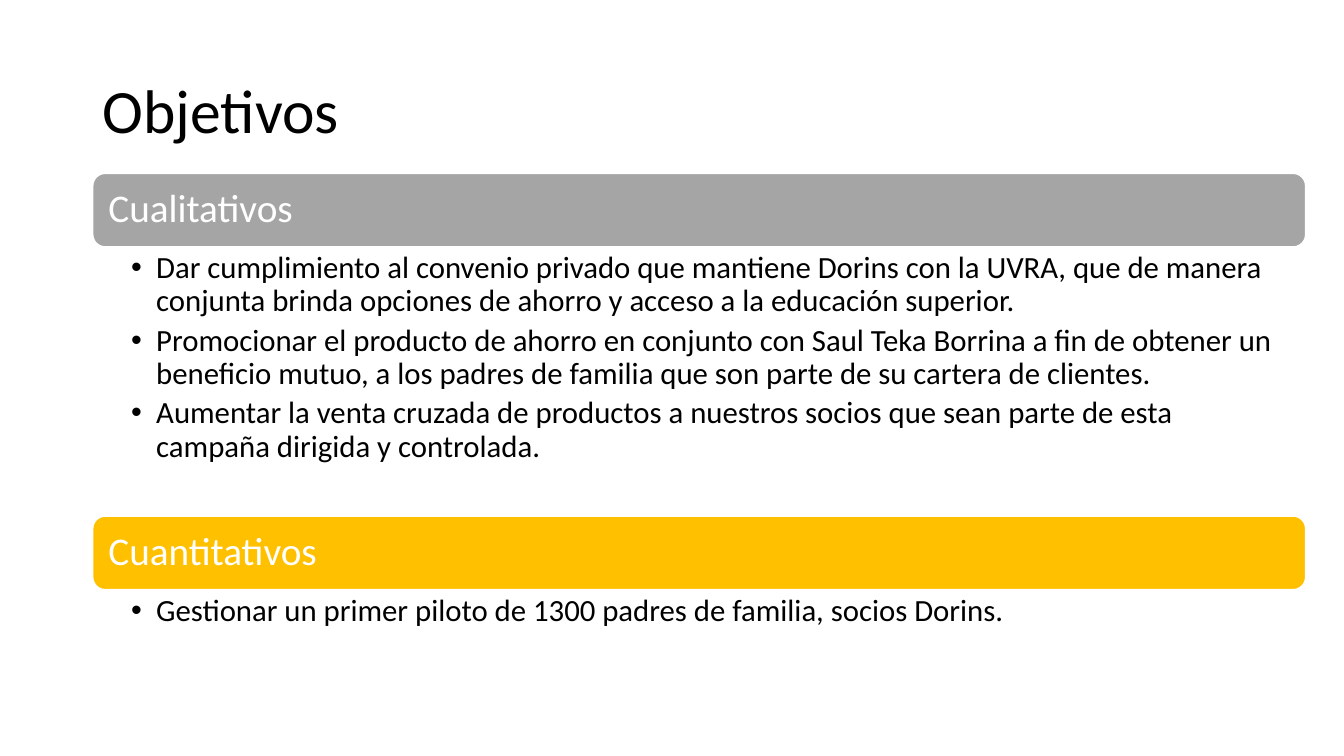
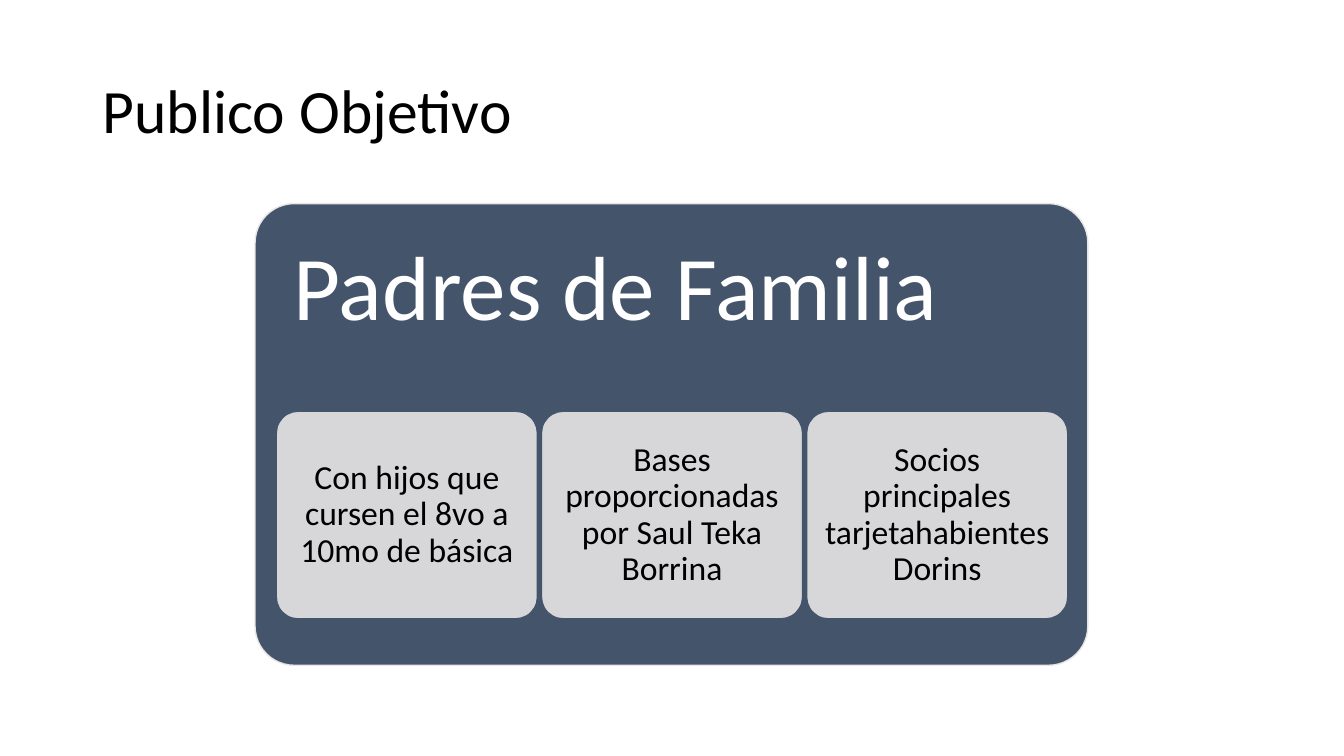
from lxml.etree import SubElement as Sub
from pptx import Presentation
from pptx.dml.color import RGBColor as Rgb
from pptx.enum.shapes import MSO_SHAPE as Form
from pptx.enum.text import MSO_ANCHOR as Anchor, PP_ALIGN as Align
from pptx.oxml.ns import qn
from pptx.util import Inches, Pt

HUES = {
    "black": "000000", "white": "FFFFFF", "gray": "A5A5A5",
    "gold": "FFC000", "navy": "44546A", "pale": "E7E6E6",
}


class Deck:
    font = "Calibri"

    def __init__(self):
        self.prs = Presentation()
        self.prs.slide_width = Inches(13.33)
        self.prs.slide_height = Inches(7.5)
        self.slide = None

    def hue(self, name):
        return Rgb.from_string(HUES[name])

    def page(self, title):
        self.slide = self.prs.slides.add_slide(self.prs.slide_layouts[6])
        frame = self.text((0.92, 0.4, 11.5, 1.45), (0.1, 0.05, 0.1, 0.05))
        frame.vertical_anchor = Anchor.MIDDLE
        self.put(frame.paragraphs[0], title, 44, "black")

    def fit(self, frame, pads):
        frame.word_wrap = True
        (frame.margin_left, frame.margin_top,
         frame.margin_right, frame.margin_bottom) = map(Inches, pads)
        return frame

    def text(self, area, pads):
        box = self.slide.shapes.add_textbox(*map(Inches, area))
        return self.fit(box.text_frame, pads)

    def put(self, para, words, size, color, align=Align.LEFT):
        para.alignment = align
        para.line_spacing = 0.9
        run = para.add_run()
        run.text = words
        run.font.name = self.font
        run.font.size = Pt(size)
        run.font.color.rgb = self.hue(color)

    def block(self, area, fill, line, pads, curve=0.17, alpha=None):
        shape = self.slide.shapes.add_shape(
            Form.ROUNDED_RECTANGLE, *map(Inches, area))
        shape.adjustments[0] = curve
        shape.shadow.inherit = False
        shape.fill.solid()
        shape.fill.fore_color.rgb = self.hue(fill)
        shape.line.color.rgb = self.hue(line)
        shape.line.width = Pt(1)
        if alpha:
            tint = shape._element.spPr.find(qn("a:solidFill"))[0]
            Sub(tint, qn("a:alpha"), val=str(alpha * 1000))
        frame = self.fit(shape.text_frame, pads)
        frame.vertical_anchor = Anchor.MIDDLE
        return frame

    def group(self, top, high, head, fill, items):
        left, wide, bar = 0.92, 12.03, 0.73
        frame = self.block((left, top, wide, bar), fill, "white", [0.12] * 4)
        self.put(frame.paragraphs[0], head, 28, "white")
        frame = self.text((left, top + bar + 0.01, wide, high),
                          (0.38, 0.04, 0.22, 0.04))
        for num, item in enumerate(items):
            para = frame.add_paragraph() if num else frame.paragraphs[0]
            self.put(para, item, 22, "black")
            para.space_after = Pt(4.4)
            self.dot(para)

    def dot(self, para):
        props = para._p.get_or_add_pPr()
        props.set("marL", str(Inches(0.25)))
        props.set("indent", str(-Inches(0.25)))
        Sub(props, qn("a:buFont"), typeface="Arial")
        Sub(props, qn("a:buChar"), char="•")

    def panel(self, head):
        frame = self.block((2.53, 2.02, 8.26, 4.58), "navy", "pale",
                           (0.27, 0.27, 0.27, 2.83), 0.085)
        frame.vertical_anchor = Anchor.TOP
        self.put(frame.paragraphs[0], head, 65, "white")

    def cards(self, items):
        for num, item in enumerate(items):
            frame = self.block((2.74 + num * 2.63, 4.08, 2.59, 2.06),
                               "pale", "navy", [0.1] * 4, 0.105, 90)
            self.put(frame.paragraphs[0], item, 24, "black", Align.CENTER)


def main():
    deck = Deck()
    deck.page("Objetivos")
    deck.group(1.72, 2.66, "Cualitativos", "gray", [
        "Dar cumplimiento al convenio privado que mantiene Dorins con la UVRA, "
        "que de manera conjunta brinda opciones de ahorro y acceso a la "
        "educación superior.",
        "Promocionar el producto de ahorro en conjunto con Saul Teka Borrina "
        "a fin de obtener un beneficio mutuo, a los padres de familia que son "
        "parte de su cartera de clientes.",
        "Aumentar la venta cruzada de productos a nuestros socios que sean "
        "parte de esta campaña dirigida y controlada.",
    ])
    deck.group(5.12, 0.51, "Cuantitativos", "gold", [
        "Gestionar un primer piloto de 1300 padres de familia, socios Dorins.",
    ])

    deck.page("Publico Objetivo")
    deck.panel("Padres de Familia")
    deck.cards([
        "Con hijos que cursen el 8vo a 10mo de básica",
        "Bases proporcionadas por Saul Teka Borrina",
        "Socios principales tarjetahabientes Dorins",
    ])
    deck.prs.save("out.pptx")


if __name__ == "__main__":
    main()
